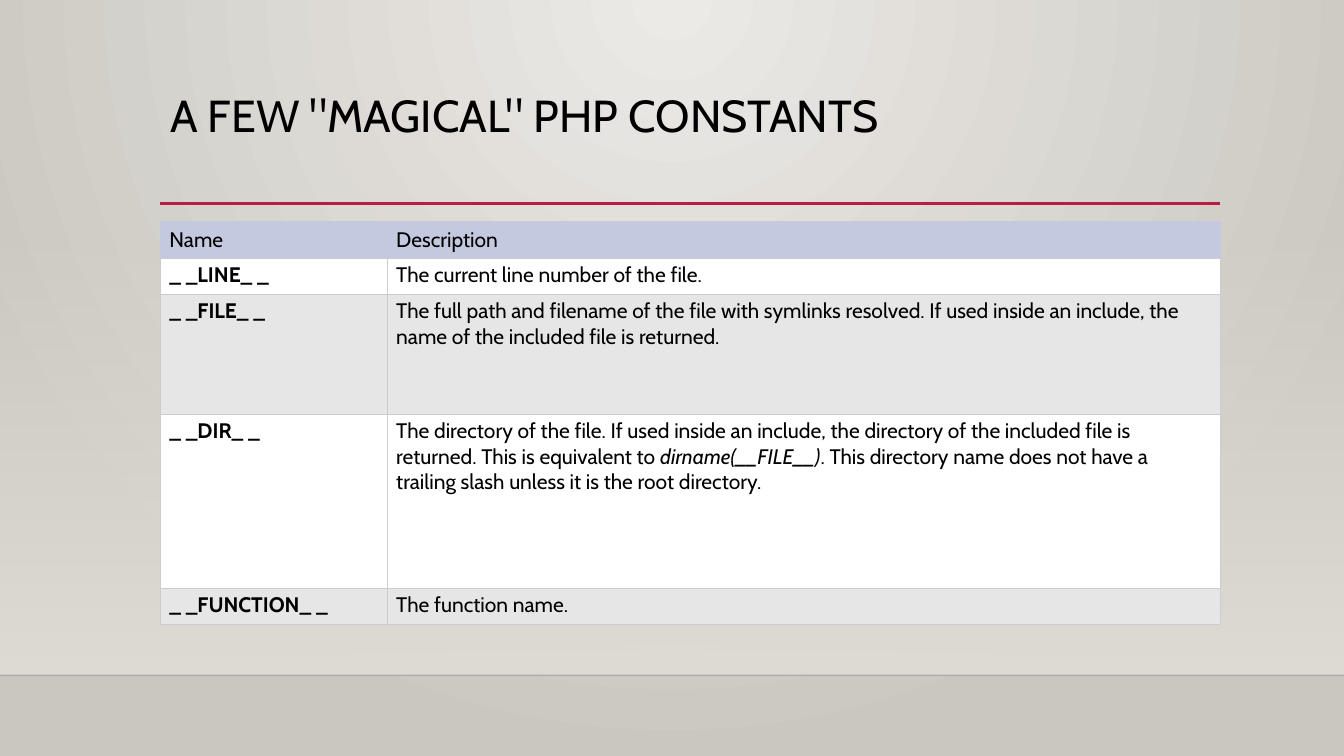
from dataclasses import dataclass

from lxml import etree
from pptx import Presentation
from pptx.dml.color import RGBColor
from pptx.enum.shapes import MSO_CONNECTOR, MSO_SHAPE
from pptx.enum.text import MSO_ANCHOR
from pptx.oxml.ns import qn
from pptx.util import Inches, Pt

STRAIGHT = MSO_CONNECTOR.STRAIGHT
RECTANGLE = MSO_SHAPE.RECTANGLE
TOP, MIDDLE = MSO_ANCHOR.TOP, MSO_ANCHOR.MIDDLE

TITLE = 'A FEW "MAGICAL" PHP CONSTANTS'
HEADINGS = ("Name", "Description")
# Each description is a list of (text, italic) spans.
CONSTANTS = [
    ("_ _LINE_ _", [("The current line number of the file.", False)]),
    ("_ _FILE_ _", [("The full path and filename of the file with symlinks resolved. "
                     "If used inside an include, the name of the included file is returned.", False)]),
    ("_ _DIR_ _", [("The directory of the file. If used inside an include, the directory of "
                    "the included file is returned. This is equivalent to ", False),
                   ("dirname(__FILE__)", True),
                   (". This directory name does not have a trailing slash unless it is "
                    "the root directory.", False)]),
    ("_ _FUNCTION_ _", [("The function name.", False)]),
]


@dataclass(frozen=True)
class Theme:
    font: str = "Cabin"
    title_size: int = 32
    table_size: int = 15
    text: str = "000000"
    accent: str = "B71E42"
    floor_line: str = "000001"
    glow: str = "ECEAE7"
    edge: str = "CAC7C1"
    wall: str = "DFDBD5"
    header: str = "C4C9DF"
    grid: str = "CCCCCC"
    bands: tuple = ("FFFFFF", "E6E6E6")


THEME = Theme()
WIDTH, HEIGHT = 13.33, 7.5
LEFT, CONTENT_WIDTH = 1.59, 10.51
TITLE_TOP, TITLE_HEIGHT = 0.88, 1.15
RULE_Y, WALL_TOP, FLOOR_Y, TABLE_TOP = 2.02, 2.21, 6.7, 2.2
COLUMNS = (2.25, CONTENT_WIDTH - 2.25)
ROWS = (0.36, 0.36, 1.19, 1.73, 0.36)
MARGIN_X, MARGIN_Y = 0.09, 0.04


def child(parent, tag, **attributes):
    return etree.SubElement(parent, qn(tag), attributes)


def set_gradient(owner, stops, direction, **attributes):
    """Refill the gradient inside owner; stops are (percent, colour, opacity)."""
    gradient = next(owner.iter(qn("a:gradFill")))
    for part in list(gradient):
        gradient.remove(part)
    stop_list = child(gradient, "a:gsLst")
    for percent, colour, opacity in stops:
        stop = child(stop_list, "a:gs", pos=str(percent * 1000))
        paint = child(stop, "a:srgbClr", val=colour)
        if opacity < 100:
            child(paint, "a:alpha", val=str(opacity * 1000))
    return child(gradient, direction, **attributes)


def add_rule(page, start, end, y, colour, weight, opacity=100):
    rule = page.shapes.add_connector(STRAIGHT, Inches(start), Inches(y), Inches(end), Inches(y))
    rule.line.color.rgb = RGBColor.from_string(colour)
    rule.line.width = Pt(weight)
    if opacity < 100:
        child(next(rule.line._ln.iter(qn("a:srgbClr"))), "a:alpha", val=str(opacity * 1000))
    child(rule._element.spPr, "a:effectLst")


def write(paragraph, spans, size, bold=False):
    for text, italic in spans:
        span = paragraph.add_run()
        span.text = text
        font = span.font
        font.name, font.size = THEME.font, Pt(size)
        font.bold, font.italic = bold, italic
        font.color.rgb = RGBColor.from_string(THEME.text)


def set_borders(cell, colours):
    """Draw left, right, top and bottom borders, in that order."""
    properties = cell._tc.get_or_add_tcPr()
    for position, (side, colour) in enumerate(zip("LRTB", colours)):
        border = child(properties, f"a:ln{side}", w=str(Pt(0.75)))
        child(child(border, "a:solidFill"), "a:srgbClr", val=colour)
        properties.insert(position, border)


def add_background(page):
    page.background.fill.gradient()
    direction = set_gradient(page.background._cSld,
                             [(0, THEME.glow, 100), (100, THEME.edge, 100)],
                             "a:path", path="circle")
    child(direction, "a:fillToRect", l="43000", t="0", r="43000", b="100000")
    wall = page.shapes.add_shape(RECTANGLE, 0, Inches(WALL_TOP),
                                 Inches(WIDTH), Inches(FLOOR_Y - WALL_TOP))
    wall.shadow.inherit = False
    wall.line.fill.background()
    wall.fill.gradient()
    set_gradient(wall._element, [(0, THEME.wall, 0), (100, THEME.wall, 100)],
                 "a:lin", ang="5400000", scaled="0")
    add_rule(page, 0, WIDTH, FLOOR_Y, THEME.floor_line, 1, opacity=20)


def add_title(page):
    box = page.shapes.add_textbox(Inches(LEFT), Inches(TITLE_TOP),
                                  Inches(CONTENT_WIDTH), Inches(TITLE_HEIGHT))
    frame = box.text_frame
    frame.word_wrap = True
    frame.vertical_anchor = TOP
    frame.paragraphs[0].line_spacing = 0.9
    write(frame.paragraphs[0], [(TITLE, False)], THEME.title_size)
    add_rule(page, LEFT, LEFT + CONTENT_WIDTH, RULE_Y, THEME.accent, 2.5)


def add_constants_table(page):
    table = page.shapes.add_table(len(ROWS), len(COLUMNS), Inches(LEFT), Inches(TABLE_TOP),
                                  Inches(CONTENT_WIDTH), Inches(sum(ROWS))).table
    table.first_row = table.horz_banding = False
    for column, width in zip(table.columns, COLUMNS):
        column.width = Inches(width)
    for row, height in zip(table.rows, ROWS):
        row.height = Inches(height)

    content = [[[(heading, False)] for heading in HEADINGS]]
    content += [[[(name, False)], spans] for name, spans in CONSTANTS]
    for row, entries in enumerate(content):
        is_header = row == 0
        fill = THEME.header if is_header else THEME.bands[(row - 1) % 2]
        edge = THEME.header if is_header else THEME.grid
        for column, spans in enumerate(entries):
            cell = table.cell(row, column)
            cell.fill.solid()
            cell.fill.fore_color.rgb = RGBColor.from_string(fill)
            cell.margin_left = cell.margin_right = Inches(MARGIN_X)
            cell.margin_top = cell.margin_bottom = Inches(MARGIN_Y)
            cell.vertical_anchor = MIDDLE if is_header else TOP
            set_borders(cell, (edge, edge, edge, THEME.grid))
            write(cell.text_frame.paragraphs[0], spans, THEME.table_size,
                  bold=column == 0 and not is_header)


def main():
    deck = Presentation()
    deck.slide_width, deck.slide_height = Inches(WIDTH), Inches(HEIGHT)
    page = deck.slides.add_slide(deck.slide_layouts[6])
    add_background(page)
    add_title(page)
    add_constants_table(page)
    deck.save("out.pptx")


if __name__ == "__main__":
    main()
